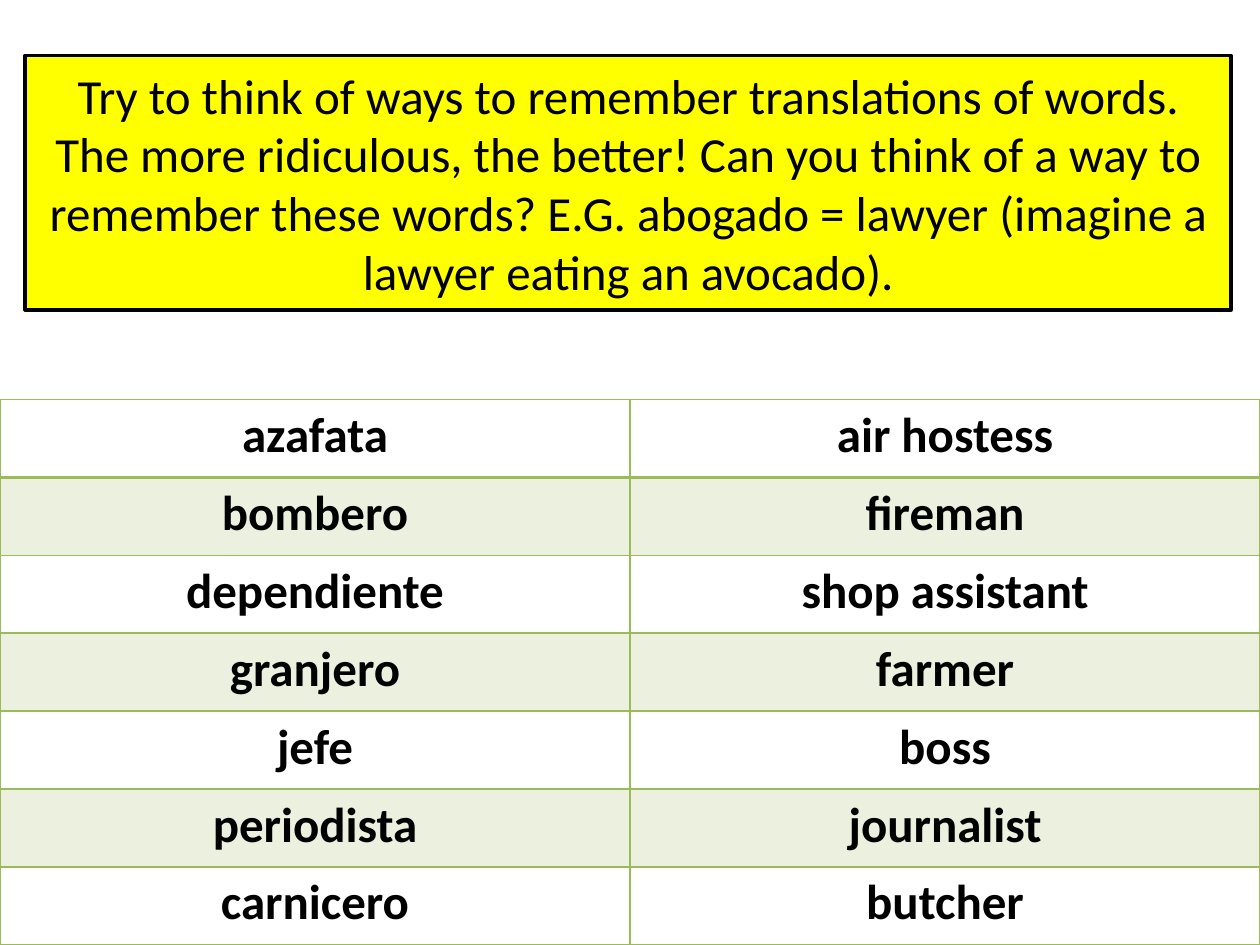
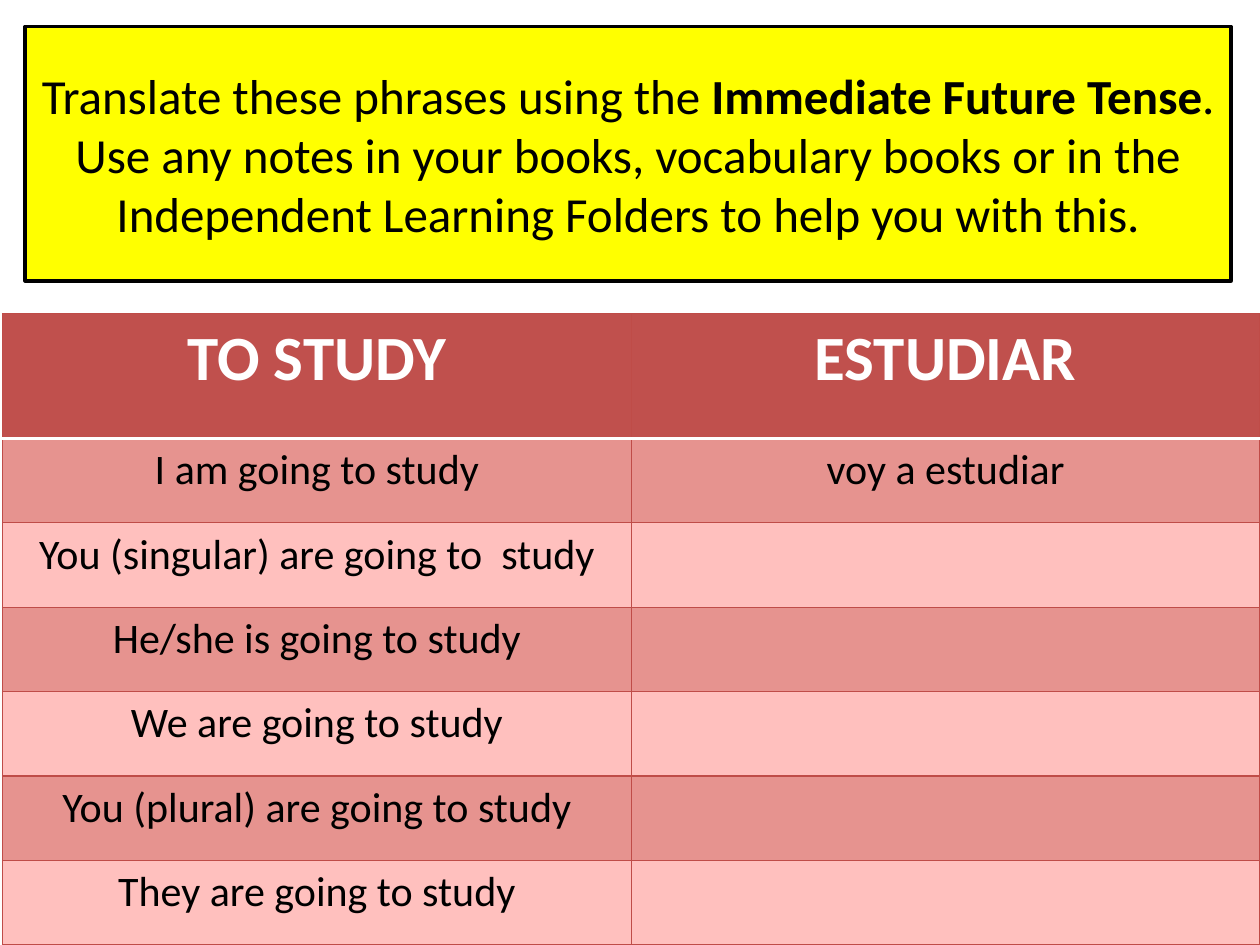
from dataclasses import dataclass

from lxml import etree
from pptx import Presentation
from pptx.dml.color import RGBColor
from pptx.enum.text import MSO_ANCHOR, PP_ALIGN
from pptx.oxml.ns import qn
from pptx.util import Inches, Pt

CENTER = PP_ALIGN.CENTER
MIDDLE = MSO_ANCHOR.MIDDLE
TITLE_ONLY = 5


@dataclass(frozen=True)
class Theme:
    font: str = "Calibri"
    text: str = "000000"
    white: str = "FFFFFF"
    prompt_fill: str = "FFFF00"
    green: str = "9BBB59"
    green_band: str = "EBF1DE"
    red: str = "C0504D"
    red_line: str = "BF4C48"
    red_band: str = "E6938F"
    red_pale: str = "FFC0BE"
    prompt_size: int = 28
    word_size: int = 28
    heading_size: int = 36
    phrase_size: int = 24


@dataclass(frozen=True)
class RowStyle:
    fill: str
    size: int
    bold: bool = False
    color: str = Theme.text


THEME = Theme()

VOCABULARY = [
    ("azafata", "air hostess"),
    ("bombero", "fireman"),
    ("dependiente", "shop assistant"),
    ("granjero", "farmer"),
    ("jefe", "boss"),
    ("periodista", "journalist"),
    ("carnicero", "butcher"),
]

PHRASES = [
    ("TO STUDY", "ESTUDIAR"),
    ("I am going to study", "voy a estudiar"),
    ("You (singular) are going to  study", ""),
    ("He/she is going to study", ""),
    ("We are going to study", ""),
    ("You (plural) are going to study", ""),
    ("They are going to study", ""),
]


def format_span(span, size, bold=False, color=THEME.text):
    span.font.name = THEME.font
    span.font.size = Pt(size)
    span.font.bold = bold
    span.font.color.rgb = RGBColor.from_string(color)


def add_prompt_page(deck, top, parts):
    """Add a page whose title is a yellow prompt box; parts are (text, bold) pairs."""
    page = deck.slides.add_slide(deck.slide_layouts[TITLE_ONLY])
    box = page.shapes.title
    box.left, box.top = Inches(0.2), Inches(top)
    box.width, box.height = Inches(9.57), Inches(2.02)
    box.fill.solid()
    box.fill.fore_color.rgb = RGBColor.from_string(THEME.prompt_fill)
    box.line.color.rgb = RGBColor.from_string(THEME.text)
    box.line.width = Pt(2)
    box.text_frame.vertical_anchor = MIDDLE
    para = box.text_frame.paragraphs[0]
    para.alignment = CENTER
    for text, bold in parts:
        span = para.add_run()
        span.text = text
        format_span(span, THEME.prompt_size, bold)
    return page


def set_border(cell, side, color, width):
    """Draw one cell side: L, R, T or B."""
    line = etree.SubElement(cell._tc.get_or_add_tcPr(), qn(f"a:ln{side}"), w=str(Pt(width)))
    fill = etree.SubElement(line, qn("a:solidFill"))
    etree.SubElement(fill, qn("a:srgbClr"), val=color)


def fill_cell(cell, text, style):
    cell.fill.solid()
    cell.fill.fore_color.rgb = RGBColor.from_string(style.fill)
    cell.text_frame.text = text
    para = cell.text_frame.paragraphs[0]
    para.alignment = CENTER
    for span in para.runs:
        format_span(span, style.size, style.bold, style.color)


def add_word_table(page, rows, left, top, heights, styles, border, divider):
    """Add a two-column table; border and divider (below row one) are (colour, width)."""
    width = 10 - left
    frame = page.shapes.add_table(
        len(rows), 2, Inches(left), Inches(top), Inches(width), Inches(sum(heights)))
    table = frame.table
    table.horz_banding = False
    for column in table.columns:
        column.width = Inches(width / 2)
    for index, (words, height, style) in enumerate(zip(rows, heights, styles)):
        table.rows[index].height = Inches(height)
        sides = {"L": border, "R": border,
                 "T": divider if index == 1 else border,
                 "B": divider if index == 0 else border}
        for cell, text in zip(table.rows[index].cells, words):
            for side, (color, line_width) in sides.items():
                set_border(cell, side, color, line_width)
            fill_cell(cell, text, style)


def add_vocabulary_page(deck):
    page = add_prompt_page(deck, 0.44, [
        ("Try to think of ways to remember translations of words. The more ridiculous, "
         "the better! Can you think of a way to remember these words? E.G. abogado = "
         "lawyer (imagine a lawyer eating an avocado).", False)])
    plain = RowStyle(THEME.white, THEME.word_size, True)
    band = RowStyle(THEME.green_band, THEME.word_size, True)
    count = len(VOCABULARY)
    add_word_table(page, VOCABULARY, 0, 3.17, [4.33 / count] * count,
                   [plain] + [band, plain] * 3, (THEME.green, 1), (THEME.green, 2))


def add_future_tense_page(deck):
    page = add_prompt_page(deck, 0.21, [
        ("Translate these phrases using the ", False),
        ("Immediate Future Tense", True),
        (". Use any notes in your books, vocabulary books or in the Independent "
         "Learning Folders to help you with this.", False)])
    heading = RowStyle(THEME.red, THEME.heading_size, True, THEME.white)
    band = RowStyle(THEME.red_band, THEME.phrase_size)
    pale = RowStyle(THEME.red_pale, THEME.phrase_size)
    add_word_table(page, PHRASES, 0.02, 2.49, [0.99] + [0.67] * 6,
                   [heading] + [band, pale] * 3, (THEME.red_line, 0.75), (THEME.white, 2))


def main():
    deck = Presentation()
    deck.slide_width, deck.slide_height = Inches(10), Inches(7.5)
    add_vocabulary_page(deck)
    add_future_tense_page(deck)
    deck.save("out.pptx")


if __name__ == "__main__":
    main()
